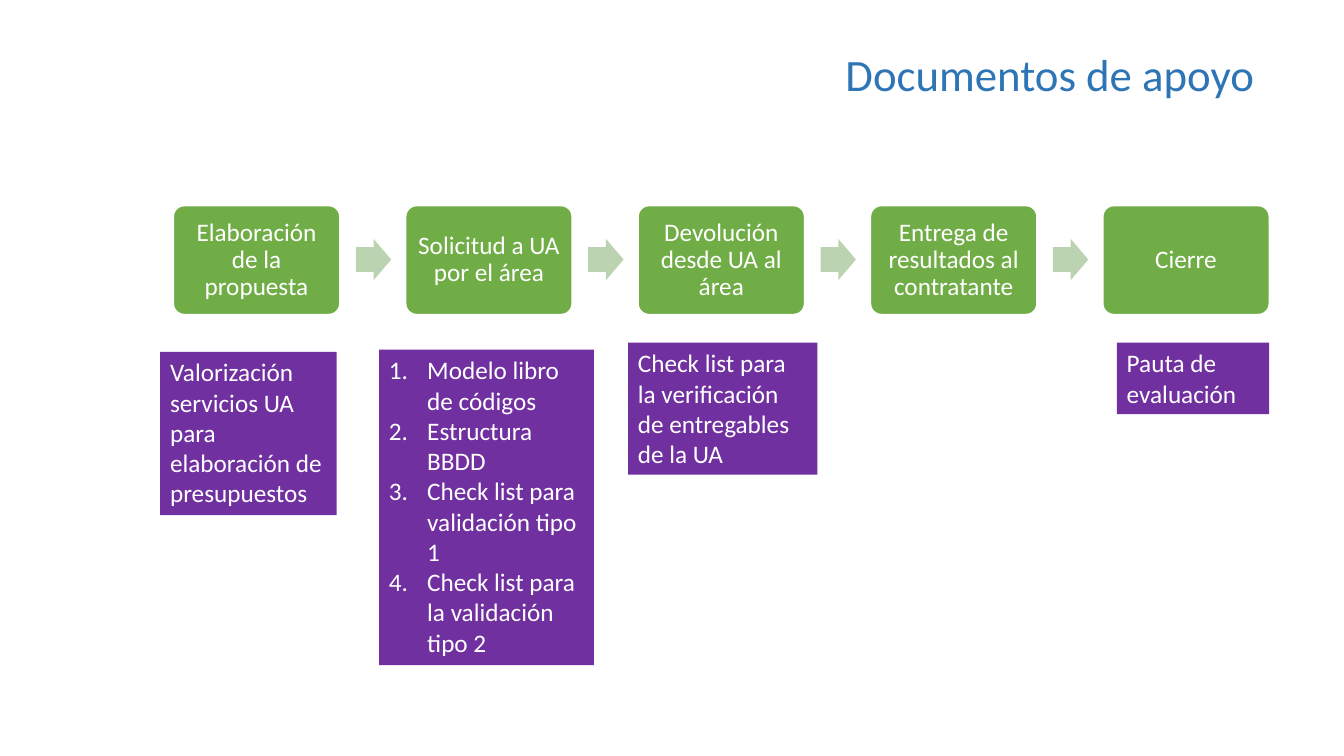
"""Build the slide that links the project steps to their support documents."""
from dataclasses import dataclass

from lxml.etree import SubElement
from pptx import Presentation
from pptx.dml.color import RGBColor
from pptx.enum.shapes import MSO_SHAPE
from pptx.enum.text import MSO_ANCHOR, MSO_AUTO_SIZE, PP_ALIGN
from pptx.oxml.ns import qn
from pptx.shapes.autoshape import Shape
from pptx.slide import Slide
from pptx.util import Emu, Inches, Pt

SLIDE_WIDTH, SLIDE_HEIGHT = Inches(13.33), Inches(7.5)
LIST_INDENT = Inches(0.38)


@dataclass(frozen=True)
class Theme:
    """Colours and type sizes of the slide."""
    font: str = "Calibri"
    title_size: int = 32
    body_size: int = 18
    title: str = "2E75B6"
    step: str = "70AD47"
    arrow: str = "BBD3B1"
    note: str = "7030A0"
    white: str = "FFFFFF"


@dataclass(frozen=True)
class Area:
    """Rectangle in percent of the slide's width and height."""
    left: float
    top: float
    width: float
    height: float

    def moved(self, columns: float) -> "Area":
        """Return the area shifted right by a percentage of the width."""
        return Area(self.left + columns, self.top, self.width, self.height)

    def lengths(self) -> tuple[Emu, Emu, Emu, Emu]:
        """Return left, top, width and height as slide lengths."""
        return (Emu(int(SLIDE_WIDTH * self.left / 100)),
                Emu(int(SLIDE_HEIGHT * self.top / 100)),
                Emu(int(SLIDE_WIDTH * self.width / 100)),
                Emu(int(SLIDE_HEIGHT * self.height / 100)))


@dataclass(frozen=True)
class Note:
    """Support documents listed under a step."""
    area: Area
    lines: tuple[str, ...]


THEME = Theme()
TITLE_AREA = Area(12.83, 5.87, 81.25, 8.67)
STEP_AREA = Area(12.9, 27.2, 12.38, 14.4)
ARROW_AREA = Area(26.48, 31.6, 2.63, 5.47)
STEP_PITCH = 17.29
STEPS = (
    "Elaboración de la propuesta",
    "Solicitud a UA por el área",
    "Devolución desde UA al área",
    "Entrega de resultados al contratante",
    "Cierre",
)
NOTES = (
    Note(Area(11.92, 46.53, 13.13, 21.6),
         ("Valorización servicios UA para elaboración de presupuestos",)),
    Note(Area(28.2, 46.27, 15.98, 41.73),
         ("Modelo libro de códigos", "Estructura BBDD",
          "Check list para validación tipo 1",
          "Check list para la validación tipo 2")),
    Note(Area(46.73, 45.33, 14.1, 17.47),
         ("Check list para la verificación de entregables de la UA",)),
    Note(Area(83.1, 45.33, 11.33, 9.47), ("Pauta de evaluación",)),
)
TITLE_FRAME = {"word_wrap": True, "vertical_anchor": MSO_ANCHOR.MIDDLE}
STEP_FRAME = TITLE_FRAME | dict.fromkeys(
    ("margin_left", "margin_top", "margin_right", "margin_bottom"), Inches(0.07))
NOTE_FRAME = {"word_wrap": True, "vertical_anchor": MSO_ANCHOR.TOP,
              "auto_size": MSO_AUTO_SIZE.SHAPE_TO_FIT_TEXT}
TITLE_PARA = {"alignment": PP_ALIGN.RIGHT, "line_spacing": 0.9}
STEP_PARA = {"alignment": PP_ALIGN.CENTER, "line_spacing": 0.9}
NOTE_PARA = {"alignment": PP_ALIGN.LEFT}


def apply_format(target: object, values: dict) -> None:
    """Set each named format value on the target."""
    for name, value in values.items():
        setattr(target, name, value)


def write_text(box: Shape, lines: tuple[str, ...], frame_format: dict,
               para_format: dict, size: int, colour: str) -> None:
    """Write one paragraph per line, numbering them when there are several."""
    frame = box.text_frame
    apply_format(frame, frame_format)
    for index, line in enumerate(lines):
        para = frame.add_paragraph() if index else frame.paragraphs[0]
        apply_format(para, para_format)
        if len(lines) > 1:
            properties = para._p.get_or_add_pPr()
            properties.set("marL", str(LIST_INDENT))
            properties.set("indent", str(-LIST_INDENT))
            SubElement(properties, qn("a:buFont"), typeface="+mj-lt")
            SubElement(properties, qn("a:buAutoNum"), type="arabicPeriod")
        span = para.add_run()
        span.text = line
        apply_format(span.font, {"name": THEME.font, "size": Pt(size)})
        span.font.color.rgb = RGBColor.from_string(colour)


def add_box(page: Slide, kind: MSO_SHAPE, area: Area, colour: str) -> Shape:
    """Add a flat filled shape without an outline."""
    box = page.shapes.add_shape(kind, *area.lengths())
    box.shadow.inherit = False
    box.fill.solid()
    box.fill.fore_color.rgb = RGBColor.from_string(colour)
    box.line.fill.background()
    return box


def add_step(page: Slide, index: int, label: str) -> None:
    """Add a step and the arrow that leads on to the next one."""
    offset = index * STEP_PITCH
    box = add_box(page, MSO_SHAPE.ROUNDED_RECTANGLE, STEP_AREA.moved(offset), THEME.step)
    box.adjustments[0] = 0.1
    box.line.color.rgb = RGBColor.from_string(THEME.white)
    box.line.width = Pt(1)
    write_text(box, (label,), STEP_FRAME, STEP_PARA, THEME.body_size, THEME.white)
    if index < len(STEPS) - 1:
        arrow = add_box(page, MSO_SHAPE.RIGHT_ARROW, ARROW_AREA.moved(offset), THEME.arrow)
        arrow.adjustments[0] = 0.6
        arrow.adjustments[1] = 0.5


def add_note(page: Slide, note: Note) -> None:
    """Add a box that names support documents."""
    box = add_box(page, MSO_SHAPE.RECTANGLE, note.area, THEME.note)
    write_text(box, note.lines, NOTE_FRAME, NOTE_PARA, THEME.body_size, THEME.white)


def main() -> None:
    """Build and save the deck."""
    deck = Presentation()
    apply_format(deck, {"slide_width": SLIDE_WIDTH, "slide_height": SLIDE_HEIGHT})
    page = deck.slides.add_slide(deck.slide_layouts[6])
    title = page.shapes.add_textbox(*TITLE_AREA.lengths())
    write_text(title, ("Documentos de apoyo",), TITLE_FRAME, TITLE_PARA,
               THEME.title_size, THEME.title)
    for index, label in enumerate(STEPS):
        add_step(page, index, label)
    for note in NOTES:
        add_note(page, note)
    deck.save("out.pptx")


if __name__ == "__main__":
    main()
